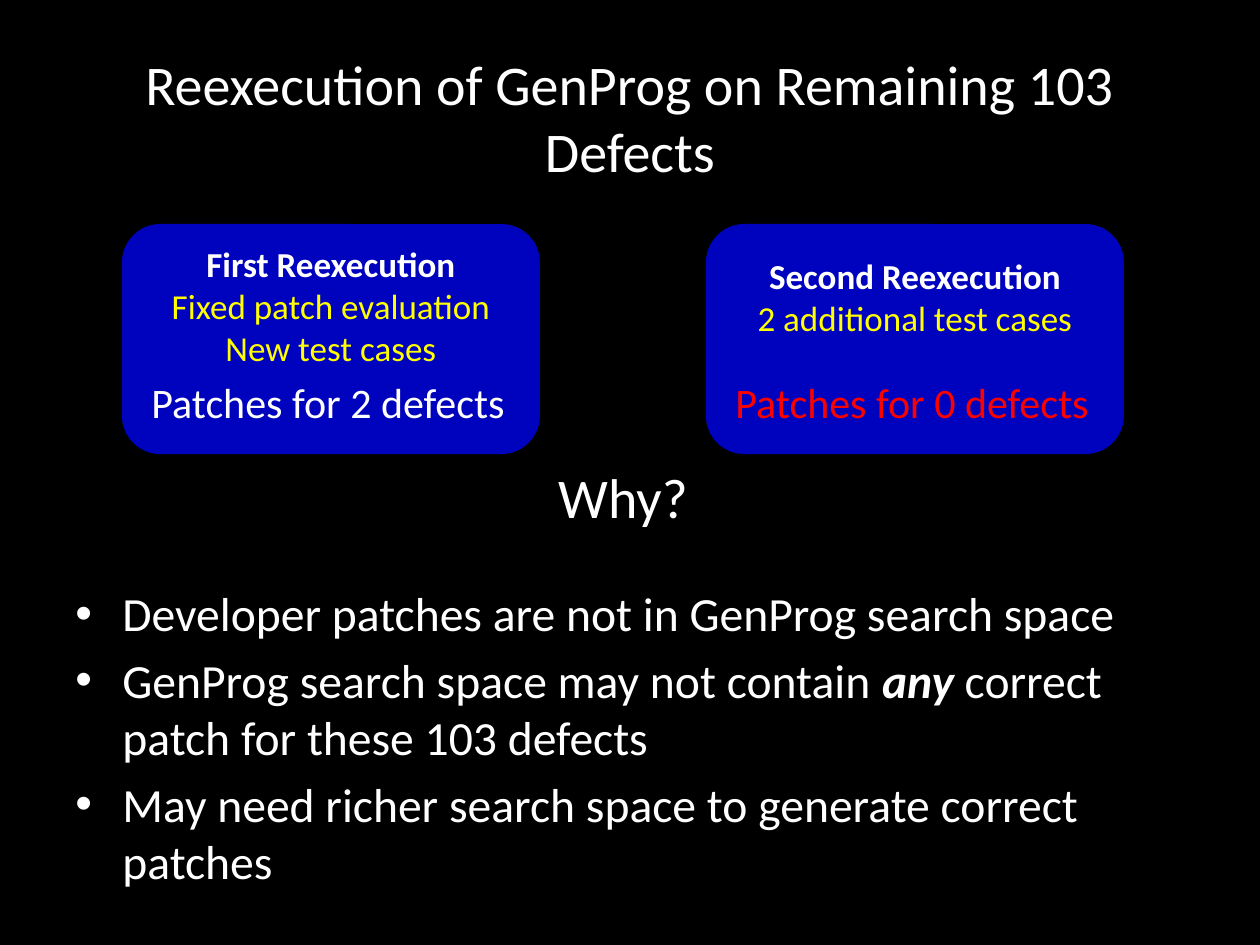
from pptx import Presentation
from pptx.dml.color import RGBColor
from pptx.enum.shapes import MSO_SHAPE
from pptx.enum.text import MSO_ANCHOR, PP_ALIGN
from pptx.oxml import parse_xml
from pptx.oxml.ns import nsdecls
from pptx.util import Pt

SCALE = 914400 / 126
WHITE, YELLOW, RED, BLUE, BLACK = "FFFFFF", "FFFF00", "FF0000", "0003BD", "000000"
POINTS = [
    [("Developer patches are not in GenProg search space", False)],
    [("GenProg search space may not contain ", False), ("any", True),
     (" correct patch for these 103 defects", False)],
    [("May need richer search space to generate correct patches", False)],
]
CARDS = [
    (122, 74, ["First Reexecution", "Fixed patch evaluation", "New test cases"],
     "Patches for 2 defects", WHITE),
    (706, 91, ["Second Reexecution", "2 additional test cases"],
     "Patches for 0 defects", RED),
]


def px(num):
    """Turn pixels into EMU."""
    return round(num * SCALE)


def rgb(code):
    """Turn a hex string into a colour."""
    return RGBColor.from_string(code)


def style(run, size, color, bold=False, italic=False):
    """Format one run."""
    font = run.font
    font.name, font.size = "Calibri", Pt(size)
    font.bold, font.italic = bold, italic
    font.color.rgb = rgb(color)


def add_box(slide, *area):
    """Add an empty wrapping text box and return its frame."""
    frame = slide.shapes.add_textbox(*map(px, area)).text_frame
    frame.word_wrap = True
    return frame


def add_text(slide, area, text, size, color=WHITE, align=PP_ALIGN.CENTER):
    """Add a text box with one paragraph."""
    frame = add_box(slide, *area)
    frame.text = text
    para = frame.paragraphs[0]
    para.alignment = align
    style(para.runs[0], size, color)
    return frame


def add_card(slide, left, foot, lines, result, color):
    """Add a rounded card with its heading, details and result."""
    card = slide.shapes.add_shape(
        MSO_SHAPE.ROUNDED_RECTANGLE, *map(px, (left, 224, 418, 230)))
    card.shadow.inherit = False
    card.fill.solid()
    card.fill.fore_color.rgb = rgb(BLUE)
    card.line.fill.background()
    frame = card.text_frame
    frame.vertical_anchor = MSO_ANCHOR.MIDDLE
    frame.margin_bottom = px(foot)
    frame.text = "\n".join(lines)
    for row, para in enumerate(frame.paragraphs):
        para.alignment = PP_ALIGN.CENTER
        style(para.runs[0], 20, YELLOW if row else WHITE, bold=not row)
    add_text(slide, (left + 17, 370, 387, 63), result, 24, color, PP_ALIGN.LEFT)


def add_list(slide, area, points):
    """Add a bulleted list of paragraphs made of plain and stressed parts."""
    frame = add_box(slide, *area)
    for row, parts in enumerate(points):
        para = frame.add_paragraph() if row else frame.paragraphs[0]
        para.space_before = Pt(5.4 if row else 0)
        props = para._p.get_or_add_pPr()
        props.set("marL", str(px(47)))
        props.set("indent", str(px(-47)))
        props.append(parse_xml(f'<a:buFont {nsdecls("a")} typeface="Arial"/>'))
        props.append(parse_xml(f'<a:buChar {nsdecls("a")} char="•"/>'))
        for text, stress in parts:
            run = para.add_run()
            run.text = text
            style(run, 27.2, WHITE, stress, stress)


def main():
    """Build the slide and save it."""
    deck = Presentation()
    deck.slide_width, deck.slide_height = px(1260), px(945)
    slide = deck.slides.add_slide(deck.slide_layouts[6])
    fill = slide.background.fill
    fill.solid()
    fill.fore_color.rgb = rgb(BLACK)
    title = add_text(slide, (63, 38, 1134, 157),
                     "Reexecution of GenProg on Remaining 103 Defects", 32)
    title.vertical_anchor = MSO_ANCHOR.MIDDLE
    for card in CARDS:
        add_card(slide, *card)
    add_text(slide, (413, 456, 420, 123), "Why?", 32)
    add_list(slide, (63, 578, 1134, 297), POINTS)
    deck.save("out.pptx")


if __name__ == "__main__":
    main()
